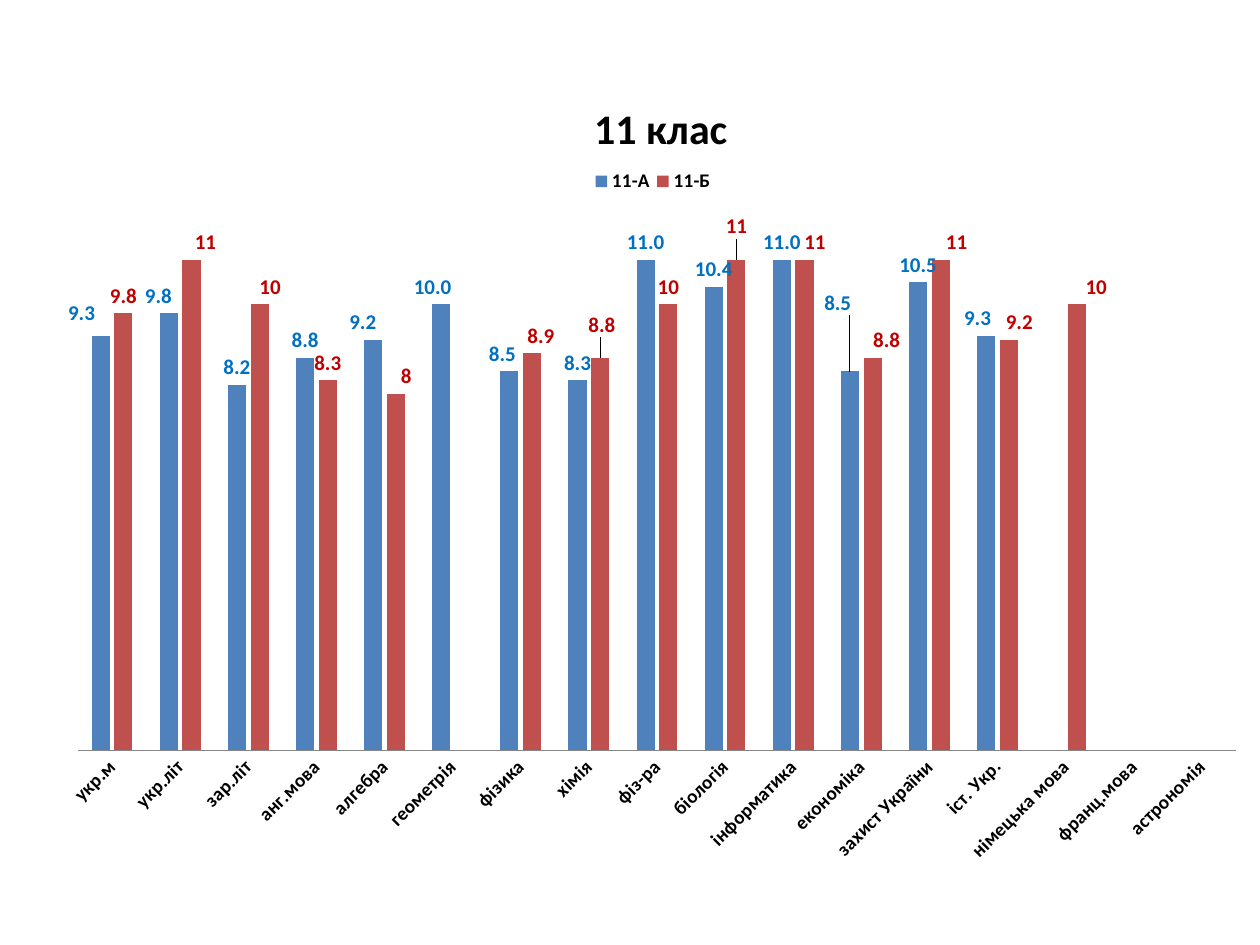
from copy import deepcopy

from lxml import etree
from pptx import Presentation
from pptx import util as u
from pptx.chart.data import CategoryChartData
from pptx.dml.color import RGBColor
from pptx.enum import chart as ch
from pptx.oxml.ns import qn

COLORS = {
    "text": "000000", "axis": "868686",
    "blue": "4F81BD", "blue label": "0070C0",
    "red": "C0504D", "red label": "C00000",
}
FONT = "Calibri"
SUBJECTS = [
    "укр.м", "укр.літ", "зар.літ", "анг.мова", "алгебра", "геометрія",
    "фізика", "хімія", "фіз-ра", "біологія", "інформатика", "економіка",
    "захист України", "іст. Укр.", "німецька мова", "франц.мова", "астрономія",
]
CLASSES = [
    {
        "name": "11-А", "color": "blue", "number_format": "0.0",
        "marks": [9.3, 9.8, 8.2, 8.8, 9.2, 10, 8.5, 8.3, 11, 10.4, 11, 8.5,
                  10.5, 9.3, None, None, None],
        "shifts": {0: (-11, -3), 1: (-6, 0), 4: (-6, 0), 5: (-5, 0),
                   6: (-4, 0), 11: (-7, -29), 13: (-5, 0)},
    },
    {
        "name": "11-Б", "color": "red", "number_format": "General",
        "marks": [9.8, 11, 10, 8.3, 8, None, 8.9, 8.8, 10, 11, 11, 8.8,
                  11, 9.2, 10, None, None],
        "shifts": {1: (8, 0), 2: (6, 0), 4: (6, 0), 6: (5, 0), 7: (1, -9),
                   9: (0, -9), 10: (6, 0), 11: (8, 0), 12: (9, 0),
                   13: (6, 0), 14: (11, 0)},
    },
]


def rgb(name):
    return RGBColor.from_string(COLORS[name])


def format_font(font, size=10, color="text", bold=False):
    font.name, font.size, font.bold = FONT, u.Pt(size), bold
    font.color.rgb = rgb(color)


def write_text(frame, content, **font_format):
    frame.text = content
    format_font(frame.paragraphs[0].runs[0].font, **font_format)


class SlideBuilder:
    def __init__(self, presentation):
        self.slide = presentation.slides.add_slide(presentation.slide_layouts[6])

    def add_column_chart(self, left, top, width, height, categories, classes):
        data = CategoryChartData()
        data.categories = categories
        for item in classes:
            data.add_series(item["name"], item["marks"])
        frame = self.slide.shapes.add_chart(
            ch.XL_CHART_TYPE.COLUMN_CLUSTERED,
            *(u.Pt(length) for length in (left, top, width, height)), data)
        self.chart = frame.chart
        self.size = {"x": width, "y": height, "w": width, "h": height}
        format_font(self.chart.font)
        plot = self.chart.plots[0]
        plot.gap_width, plot.overlap, plot.vary_by_categories = 150, -25, False
        for series, item in zip(plot.series, classes):
            self.format_series(series, item)

    def layout(self, inner=False, absolute=True, **lengths):
        layout = etree.Element(qn("c:layout"))
        manual = etree.SubElement(layout, qn("c:manualLayout"))
        if inner:
            etree.SubElement(manual, qn("c:layoutTarget"), val="inner")
        if absolute:
            for side in "xy":
                etree.SubElement(manual, qn(f"c:{side}Mode"), val="edge")
        for side, length in lengths.items():
            etree.SubElement(manual, qn(f"c:{side}"),
                             val=f"{length / self.size[side]:.4f}")
        return layout

    def place(self, element, before, **lengths):
        for old in element.findall(qn("c:layout")):
            element.remove(old)
        element.find(qn(before)).addprevious(self.layout(**lengths))

    def format_series(self, series, item):
        series.format.fill.solid()
        series.format.fill.fore_color.rgb = rgb(item["color"])
        series.invert_if_negative = False
        labels = series.data_labels
        labels.show_value = True
        labels.number_format = item["number_format"]
        labels.number_format_is_linked = False
        labels.position = ch.XL_LABEL_POSITION.OUTSIDE_END
        format_font(labels.font, 12, item["color"] + " label", True)
        self.shift_labels(series, item["shifts"])

    def shift_labels(self, series, shifts):
        labels = series._element.find(qn("c:dLbls"))
        shared = [child for child in labels
                  if child.tag != qn("c:showLeaderLines")]
        for position, (index, (right, down)) in enumerate(shifts.items()):
            label = etree.Element(qn("c:dLbl"))
            etree.SubElement(label, qn("c:idx"), val=str(index))
            label.append(self.layout(absolute=False, x=right, y=down))
            label.extend(deepcopy(child) for child in shared)
            labels.insert(position, label)

    def add_title(self, content, left, top):
        write_text(self.chart.chart_title.text_frame, content, size=24, bold=True)
        title = self.chart.chart_title._element
        self.chart.chart_title.include_in_layout = False if hasattr(
            self.chart.chart_title, "include_in_layout") else None
        for old in title.findall(qn("c:layout")):
            title.remove(old)
        title.find(qn("c:tx")).addnext(self.layout(x=left, y=top))

    def add_legend(self, left, top, width, height):
        self.chart.has_legend = True
        legend = self.chart.legend
        legend.position = ch.XL_LEGEND_POSITION.TOP
        legend.include_in_layout = False
        format_font(legend.font, 11, bold=True)
        self.place(legend._element, "c:overlay",
                   x=left, y=top, w=width, h=height)

    def format_axes(self, maximum):
        subjects = self.chart.category_axis
        subjects.major_tick_mark = ch.XL_TICK_MARK.NONE
        subjects.format.line.color.rgb = rgb("axis")
        subjects.format.line.width = u.Pt(0.75)
        format_font(subjects.tick_labels.font, 11, bold=True)
        body = subjects._element.find(qn("c:txPr")).find(qn("a:bodyPr"))
        body.set("rot", str(-45 * 60000))
        marks = self.chart.value_axis
        marks.minimum_scale, marks.maximum_scale = 0, maximum
        marks.has_major_gridlines = False
        marks.tick_labels.number_format = "0.0"
        marks.tick_labels.number_format_is_linked = False
        marks.visible = False

    def place_plot(self, left, top, width, height):
        area = self.chart._chartSpace.chart.plotArea
        self.place(area, "c:barChart", inner=True,
                   x=left, y=top, w=width, h=height)


def main():
    presentation = Presentation()
    presentation.slide_width, presentation.slide_height = u.Pt(720), u.Pt(540)
    builder = SlideBuilder(presentation)
    builder.add_column_chart(25.2, 31.7, 694.8, 470.9, SUBJECTS, CLASSES)
    builder.add_title("11 клас", 310, 21)
    builder.add_legend(311, 64, 74, 16)
    builder.format_axes(12)
    builder.place_plot(19.4, 91.4, 661.7, 305.7)
    presentation.save("out.pptx")


if __name__ == "__main__":
    main()
